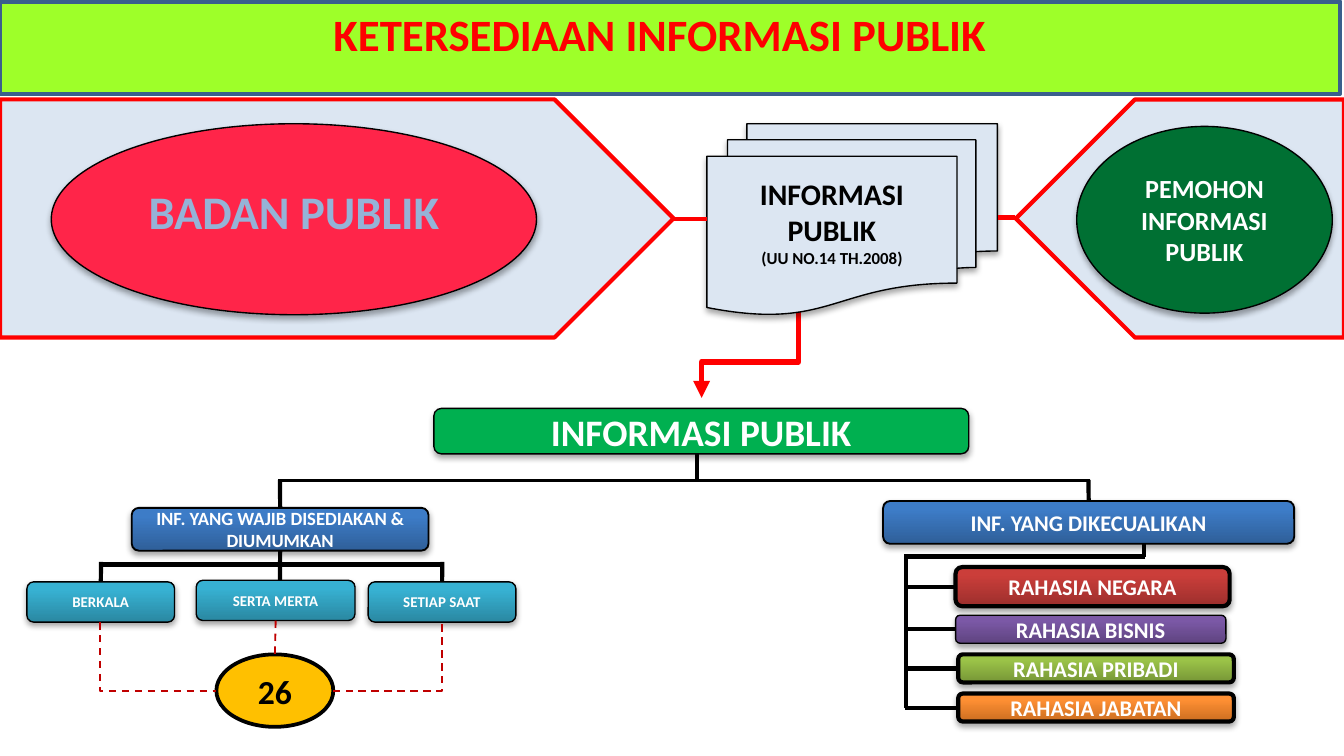
from lxml.etree import SubElement
from pptx import Presentation
from pptx.dml.color import RGBColor
from pptx.enum.dml import MSO_LINE
from pptx.enum.shapes import MSO_CONNECTOR as LINK, MSO_SHAPE as FORM
from pptx.enum.text import MSO_ANCHOR, PP_ALIGN
from pptx.oxml.ns import qn
from pptx.util import Cm, Pt

INK = {
    "black": "000000", "white": "FFFFFF", "red": "FF0000", "lime": "9EFF29",
    "navy": "3A5F8C", "pale": "DCE6F2", "rose": "FF2549", "sky": "95B3D7",
    "forest": "007033", "green": "00B050", "gold": "FFC000", "wine": "C00000",
}
FADE = {
    "blue": ("2F5F99", "3D7CC7"), "teal": ("2A88A2", "37B1D2"),
    "brick": ("9C2F2D", "CB3E3A"), "plum": ("5F4480", "7B58A6"),
    "olive": ("779737", "9BC348"), "orange": ("CC6E20", "FF9034"),
}


def tint(name):
    return RGBColor.from_string(INK[name])


def paint(shape, name):
    fill = shape.fill
    if name in INK:
        fill.solid()
        fill.fore_color.rgb = tint(name)
        return
    fill.gradient()
    fill.gradient_angle = 90
    for stop, tone, spot in zip(fill.gradient_stops, FADE[name], (0, 0.8)):
        stop.color.rgb = RGBColor.from_string(tone)
        stop.position = spot


def shade(shape):
    glow = shape._element.spPr.find(qn("a:effectLst"))
    cast = SubElement(glow, qn("a:outerShdw"), blurRad="40000", dist="23000",
                      dir="5400000", rotWithShape="0")
    tone = SubElement(cast, qn("a:srgbClr"), val=INK["black"])
    SubElement(tone, qn("a:alpha"), val="35000")


def block(slide, form, area, fill, edge="black", width=0.75, shadow=True):
    shape = slide.shapes.add_shape(form, *map(Cm, area))
    shape.shadow.inherit = False
    paint(shape, fill)
    shape.line.color.rgb = tint(edge)
    shape.line.width = Pt(width)
    if shadow:
        shade(shape)
    return shape


def label(shape, text, size, ink="white", lift=None):
    frame = shape.text_frame
    frame.word_wrap = True
    frame.vertical_anchor = MSO_ANCHOR.MIDDLE
    if lift:
        frame.margin_top = 0
        frame.margin_bottom = Cm(lift)
    frame.text = text
    for para in frame.paragraphs:
        para.alignment = PP_ALIGN.CENTER
        font = para.font
        font.name = "Calibri"
        font.size = Pt(size)
        font.bold = True
        font.color.rgb = tint(ink)
    return shape


def card(slide, area, fill, text, size, width=0.75):
    shape = block(slide, FORM.ROUNDED_RECTANGLE, area, fill, width=width)
    return label(shape, text, size)


def wire(slide, ends, ink="black", width=2.25, start=None, stop=None,
         dash=False, form=LINK.STRAIGHT):
    line = slide.shapes.add_connector(form, *map(Cm, ends))
    if start:
        line.begin_connect(*start)
    if stop:
        line.end_connect(*stop)
    line.line.color.rgb = tint(ink)
    line.line.width = Pt(width)
    if dash:
        line.line.dash_style = MSO_LINE.DASH
    SubElement(line._element.spPr, qn("a:effectLst"))
    return line


def elbow(slide, ends, ink, width, dash=False, bend=None):
    left, top, right, base = ends
    side = 1 if right > left else -1
    midx, midy = (left + right) / 2, (top + base) / 2
    wide, high = side * (base - top) / 2, abs(right - left) / 2
    box = (midx + wide, midy - high, midx - wide, midy + high)
    line = wire(slide, box, ink, width, dash=dash, form=LINK.ELBOW)
    props = line._element.spPr
    turn = 270 if side == 1 else 90
    props.find(qn("a:xfrm")).set("rot", str(turn * 60000))
    shape = props.find(qn("a:prstGeom"))
    if bend is None:
        shape.set("prst", "bentConnector2")
    else:
        SubElement(shape.find(qn("a:avLst")), qn("a:gd"), name="adj1",
                   fmla=f"val {bend}")
    return line


def header(slide):
    bar = block(slide, FORM.FLOWCHART_PROCESS, (0, 0.03, 25.32, 1.75),
                "lime", "navy", 2.25, False)
    label(bar, "KETERSEDIAAN INFORMASI PUBLIK", 24, "red", 0.53)
    bar.text_frame.margin_right = Cm(0.63)


def parties(slide):
    arrow = elbow(slide, (15.09, 5.89, 13.26, 7.52), "red", 3, bend=58400)
    SubElement(arrow.line._get_or_add_ln(), qn("a:tailEnd"), type="triangle")
    for left, wide, turn in ((0, 12.73, 0), (19.2, 6.2, 180)):
        plate = block(slide, FORM.PENTAGON, (left, 1.88, wide, 4.5),
                      "pale", "red", 2.25, False)
        plate.rotation = turn
    paper = block(slide, FORM.FLOWCHART_MULTIDOCUMENT,
                  (13.36, 2.34, 5.49, 3.61), "pale")
    label(paper, "INFORMASI\nPUBLIK\n(UU NO.14 TH.2008)", 16, "black", 0.38)
    paper.text_frame.paragraphs[2].font.size = Pt(9)
    body = block(slide, FORM.OVAL, (0.97, 2.34, 9.17, 3.61), "rose")
    label(body, "BADAN PUBLIK", 25, "sky", 0.33)
    asker = block(slide, FORM.OVAL, (20.35, 2.39, 4.83, 3.53), "forest")
    label(asker, "PEMOHON INFORMASI PUBLIK", 14)
    wire(slide, (12.73, 4.14, 13.36, 4.14), "red")
    wire(slide, (18.87, 4.11, 19.18, 4.11), "red")


def branches(slide):
    card(slide, (8.2, 7.72, 10.11, 0.86), "green", "INFORMASI PUBLIK", 20)
    duty = card(slide, (2.49, 9.6, 5.61, 0.81), "blue",
                "INF. YANG WAJIB DISEDIAKAN & DIUMUMKAN", 10, 1)
    closed = card(slide, (16.69, 9.47, 7.77, 0.81), "blue",
                  "INF. YANG DIKECUALIKAN", 12, 1)
    wire(slide, (13.18, 8.59, 13.18, 9.12))
    wire(slide, (5.26, 9.09, 20.6, 9.09), width=1.5)
    wire(slide, (5.29, 9.07, 5.29, 9.6), stop=(duty, 0))
    wire(slide, (20.57, 9.07, 20.57, 9.47), stop=(closed, 0))
    return duty


def kinds(slide, duty):
    rows = (("BERKALA", 0.51, 11, 2.79), ("SERTA MERTA", 3.71, 10.97, 3),
            ("SETIAP SAAT", 6.96, 11, 2.79))
    first, mid, last = [card(slide, (left, top, wide, 0.76), "teal", text, 8)
                        for text, left, top, wide in rows]
    total = block(slide, FORM.OVAL, (4.09, 12.37, 2.21, 1.37),
                  "gold", width=2, shadow=False)
    label(total, "26", 18, "black")
    wire(slide, (1.91, 10.67, 8.36, 10.67))
    wire(slide, (5.29, 10.41, 5.29, 10.97), start=(duty, 2))
    for x, box in ((1.91, first), (8.36, last)):
        wire(slide, (x, 10.62, x, 11), stop=(box, 0))
    elbow(slide, (1.89, 11.76, 4.09, 13.06), "wine", 1, True)
    elbow(slide, (8.35, 11.8, 6.3, 13.06), "wine", 1, True)
    wire(slide, (5.21, 11.73, 5.21, 12.37), "wine", 1,
         (mid, 2), (total, 0), True)


def secrets(slide):
    rows = (("NEGARA", "brick", (18.06, 10.72, 5.18, 0.74), 2.25),
            ("BISNIS", "plum", (18.06, 11.63, 5.11, 0.53), 0.75),
            ("PRIBADI", "olive", (18.11, 12.37, 5.21, 0.53), 2.25),
            ("JABATAN", "orange", (18.11, 13.11, 5.21, 0.53), 2.25))
    wire(slide, (21.62, 10.29, 21.62, 10.52))
    wire(slide, (21.64, 10.52, 17.09, 10.52))
    wire(slide, (17.13, 10.52, 17.13, 13.39))
    for name, fill, area, width in rows:
        box = card(slide, area, fill, f"RAHASIA {name}", 12, width)
        y = area[1] + area[3] / 2
        wire(slide, (area[0], y, 17.11, y), start=(box, 1))


def main():
    deck = Presentation()
    deck.slide_width, deck.slide_height = Cm(25.4), Cm(14.29)
    slide = deck.slides.add_slide(deck.slide_layouts[6])
    header(slide)
    parties(slide)
    duty = branches(slide)
    kinds(slide, duty)
    secrets(slide)
    deck.save("out.pptx")


if __name__ == "__main__":
    main()
